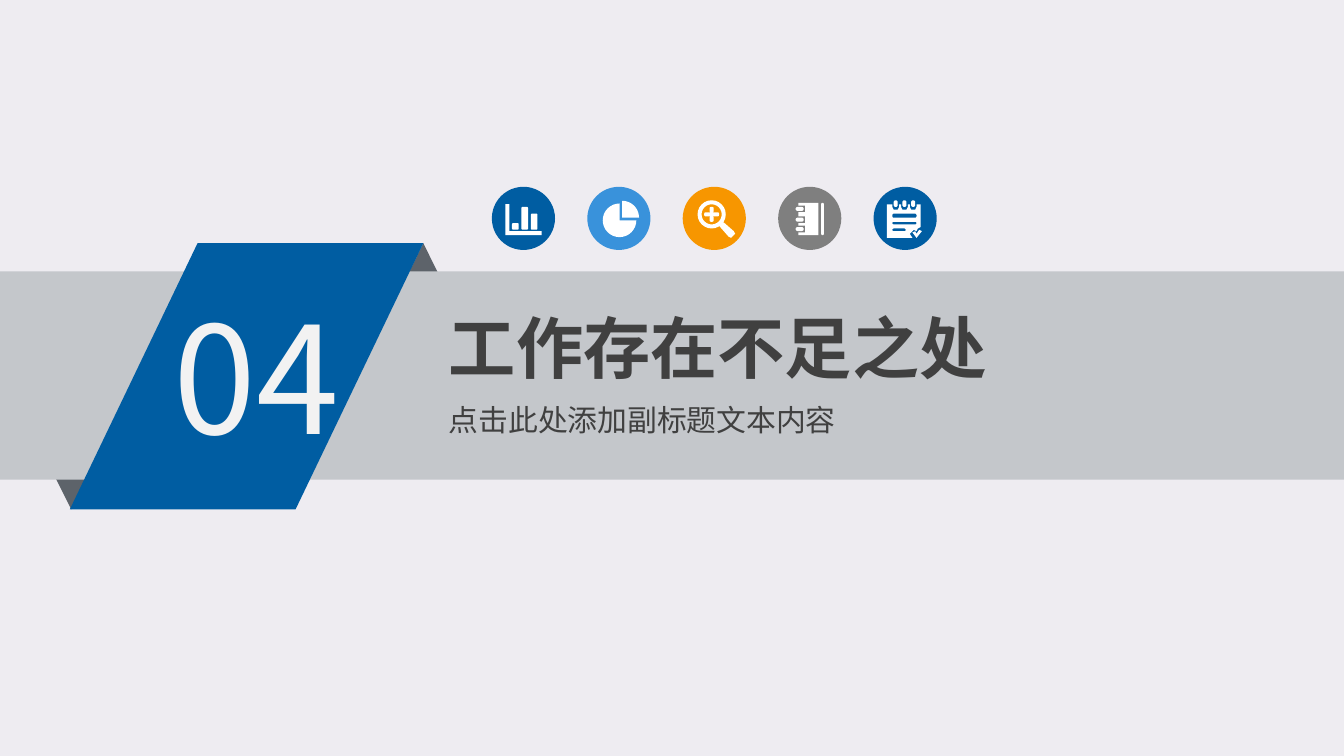
import dataclasses
import math

import pptx
import pptx.dml.color
import pptx.enum.shapes
import pptx.enum.text
import pptx.oxml
import pptx.oxml.ns
import pptx.util

Inches = pptx.util.Inches
Preset = pptx.enum.shapes.MSO_SHAPE


@dataclasses.dataclass(frozen=True)
class Theme:
    font: str = "Noto Sans CJK SC"
    backdrop: str = "EEECF1"
    band: str = "C4C7CB"
    fold: str = "5D636A"
    blue: str = "005DA2"
    sky: str = "3992DB"
    orange: str = "F79600"
    gray: str = "7F7F7F"
    white: str = "FFFFFF"
    pale: str = "F2F2F2"
    ink: str = "404040"
    number_size: int = 80
    title_size: int = 36
    subtitle_size: int = 16


def rgb(value):
    return pptx.dml.color.RGBColor.from_string(value)


def write(frame, text, *, font, size, color, bold=False):
    run = frame.paragraphs[0].add_run()
    run.text = text
    run.font.size = pptx.util.Pt(size)
    run.font.bold = bold
    run.font.color.rgb = rgb(color)
    run.font.name = font
    east_asian = pptx.oxml.parse_xml(
        f'<a:ea {pptx.oxml.ns.nsdecls("a")} typeface="{font}"/>'
    )
    run.font._element.append(east_asian)


def arc(x, y, radius, start=0, end=360, steps=24):
    angles = [math.radians(start + (end - start) * i / steps) for i in range(steps + 1)]
    return [(x + radius * math.cos(a), y + radius * math.sin(a)) for a in angles]


def sector(x, y, radius, start, end):
    return [(x, y)] + arc(x, y, radius, start, end)


def bar(x, y, width, height, radius=1):
    right, bottom = x + width - radius, y + height - radius
    corners = [(right, bottom), (x + radius, bottom), (x + radius, y + radius), (right, y + radius)]
    return [
        point
        for turn, (cx, cy) in enumerate(corners)
        for point in arc(cx, cy, radius, 90 * turn, 90 * turn + 90, 4)
    ]


@dataclasses.dataclass
class Deck:
    slide: object
    theme: Theme

    def paint(self, shape, color):
        shape.shadow.inherit = False
        shape.fill.solid()
        shape.fill.fore_color.rgb = rgb(color)
        shape.line.fill.background()

    def shape(self, preset, left, top, width, height, color):
        shape = self.slide.shapes.add_shape(
            preset, Inches(left), Inches(top), Inches(width), Inches(height)
        )
        self.paint(shape, color)
        return shape

    def text(self, text, left, top, width, height, inset=0.08, **style):
        frame = self.slide.shapes.add_textbox(
            Inches(left), Inches(top), Inches(width), Inches(height)
        ).text_frame
        frame.word_wrap = True
        frame.auto_size = pptx.enum.text.MSO_AUTO_SIZE.SHAPE_TO_FIT_TEXT
        frame.margin_left = frame.margin_right = Inches(inset)
        frame.margin_top = frame.margin_bottom = Inches(0.04)
        write(frame, text, font=self.theme.font, **style)

    def badge(self, left, top, color, contours):
        self.shape(Preset.OVAL, left, top, 0.47, 0.47, color)
        outlines = [
            [(Inches(left + x / 100), Inches(top + y / 100)) for x, y in contour]
            for contour in contours
        ]
        builder = self.slide.shapes.build_freeform(*outlines[0][0], scale=1.0)
        builder.add_line_segments(outlines[0][1:], close=True)
        for start, *rest in outlines[1:]:
            builder.move_to(*start)
            builder.add_line_segments(rest, close=True)
        self.paint(builder.convert_to_shape(), self.theme.white)


def bar_chart():
    axes = [(10, 13), (13, 13), (13, 33), (37, 33), (37, 36), (10, 36)]
    return [axes, bar(15, 27, 5, 5), bar(22, 15, 5, 17), bar(29, 20, 5, 12)]


def pie_chart():
    return [sector(26, 23, 12.5, -90, 0), sector(24, 25, 12.5, 0, 270)]


def magnifier():
    handle = [(27.5, 29.5), (30.5, 26.5), (38, 33), (39, 35), (36, 38), (34, 37)]
    plus = [bar(16, 19, 11, 3), bar(20, 15, 3, 4), bar(20, 22, 3, 4)]
    return [arc(21.5, 20.5, 10.5), arc(21.5, 20.5, 7.5), handle, *plus]


def notebook():
    notches = (14, 22, 29)
    cover = [(30, 36), (30, 12), (15, 12)]
    for top in notches:
        cover += [(15, top), (20, top), (20, top + 5), (15, top + 5)]
    cover.append((15, 36))
    return [cover, bar(32, 12, 2, 24)] + [bar(13, top + 1, 6, 3, 1.5) for top in notches]


def checklist():
    notches = (14, 20.5, 27)
    page = [(10, 38), (10, 13)]
    for left in notches:
        page += [(left, 13), (left, 15), (left + 1, 17), (left + 4, 17), (left + 5, 15), (left + 5, 13)]
    page += [(35, 13), (35, 30), (33, 31), (32, 33), (30, 32), (27, 35), (29, 38)]
    rings = [bar(left + 1, 10, 3, 5, 1.5) for left in notches]
    lines = [bar(14, 20, 18, 3), bar(14, 26, 18, 2), bar(14, 31, 10, 2)]
    tick = [(29, 34), (31, 33), (32, 35), (34, 32), (36, 33), (32, 38)]
    return [page, *rings, *lines, tick]


def main():
    theme = Theme()
    presentation = pptx.Presentation()
    presentation.slide_width = Inches(10)
    presentation.slide_height = Inches(10 * 9 / 16)
    slide = presentation.slides.add_slide(presentation.slide_layouts[6])
    slide.background.fill.solid()
    slide.background.fill.fore_color.rgb = rgb(theme.backdrop)
    deck = Deck(slide, theme)

    deck.shape(Preset.ISOSCELES_TRIANGLE, 2.7, 1.81, 0.9, 0.91, theme.fold)
    lower_fold = deck.shape(Preset.ISOSCELES_TRIANGLE, 0.08, 2.89, 0.9, 0.9, theme.fold)
    lower_fold.rotation = 180
    deck.shape(Preset.RECTANGLE, 0, 2.02, 10, 1.55, theme.band)
    ribbon = deck.shape(Preset.PARALLELOGRAM, 0.52, 1.81, 2.63, 1.98, theme.blue)
    ribbon.adjustments[0] = 0.48

    deck.text("04", 1.22, 2.08, 1.45, 1.42, inset=0.07,
              size=theme.number_size, color=theme.pale)
    deck.text("工作存在不足之处", 3.26, 2.24, 5.52, 0.68,
              size=theme.title_size, color=theme.ink, bold=True)
    deck.text("点击此处添加副标题文本内容", 3.26, 2.95, 3.36, 0.35,
              size=theme.subtitle_size, color=theme.ink)

    badges = [
        (theme.blue, bar_chart()),
        (theme.sky, pie_chart()),
        (theme.orange, magnifier()),
        (theme.gray, notebook()),
        (theme.blue, checklist()),
    ]
    for index, (color, contours) in enumerate(badges):
        deck.badge(3.66 + 0.71 * index, 1.39, color, contours)

    presentation.save("out.pptx")


if __name__ == "__main__":
    main()
